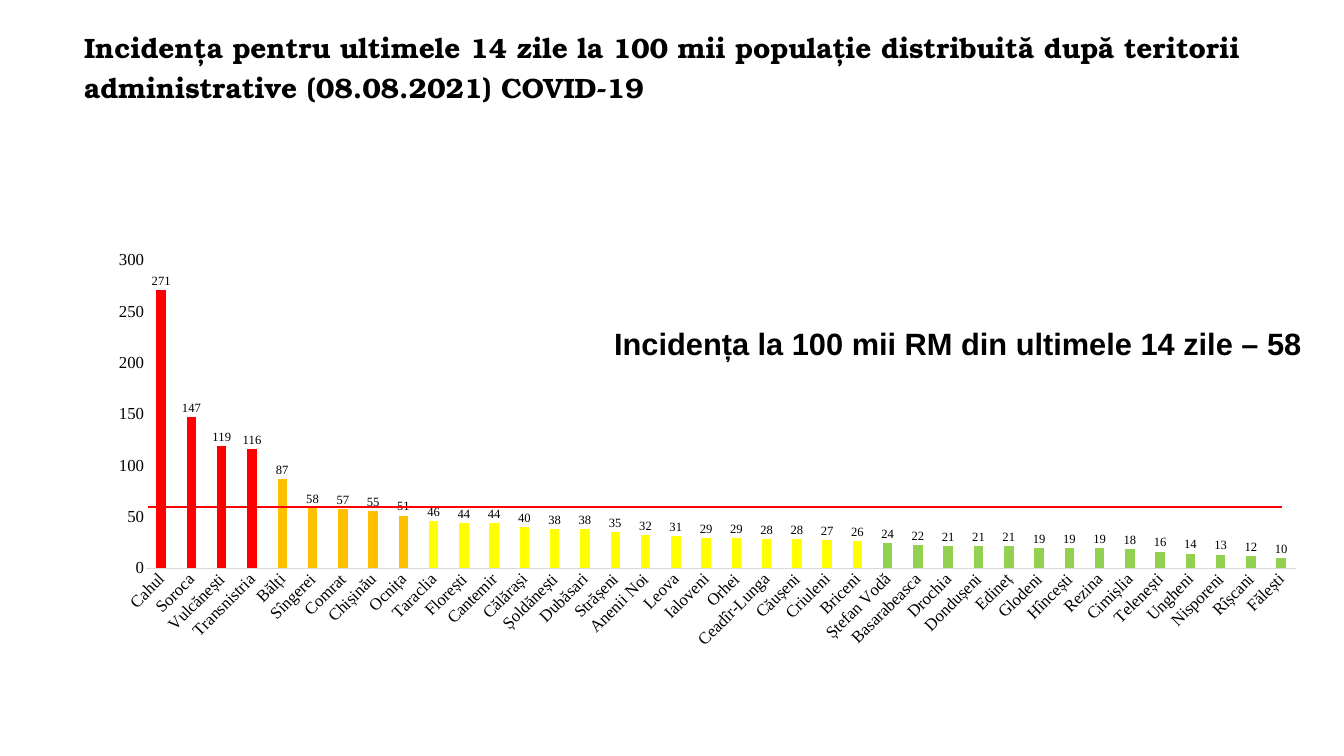
"""Build the slide on COVID-19 incidence by administrative territory."""
import dataclasses

import pptx
import pptx.chart.data
import pptx.dml.color
import pptx.enum.chart
import pptx.enum.shapes
import pptx.enum.text
import pptx.oxml
import pptx.oxml.ns
import pptx.util

EMU_PER_PX = 9144
BLACK, RED, GREEN = "000000", "FF0000", "92D050"
CHART_FONT = "Times New Roman"
THRESHOLDS = [(100, RED), (50, "FFC000"), (25, "FFFF00"), (0, GREEN)]
INCIDENCE = {
    "Cahul": 271, "Soroca": 147, "Vulcănești": 119, "Transnistria": 116,
    "Bălți": 87, "Sîngerei": 58, "Comrat": 57, "Chișinău": 55,
    "Ocnița": 51, "Taraclia": 46, "Florești": 44, "Cantemir": 44,
    "Călărași": 40, "Șoldănești": 38, "Dubăsari": 38, "Strășeni": 35,
    "Anenii Noi": 32, "Leova": 31, "Ialoveni": 29, "Orhei": 29,
    "Ceadîr-Lunga": 28, "Căușeni": 28, "Criuleni": 27, "Briceni": 26,
    "Ștefan Vodă": 24, "Basarabeasca": 22, "Drochia": 21, "Dondușeni": 21,
    "Edineț": 21, "Glodeni": 19, "Hîncești": 19, "Rezina": 19,
    "Cimișlia": 18, "Telenești": 16, "Ungheni": 14, "Nisporeni": 13,
    "Rîșcani": 12, "Fălești": 10,
}
PLOT_LAYOUT = {"x": 0.09, "y": 0.03, "w": 0.91, "h": 0.66}


@dataclasses.dataclass(frozen=True)
class Box:
    left: int
    top: int
    width: int
    height: int

    def emu(self) -> list[int]:
        return [px(value) for value in dataclasses.astuple(self)]


@dataclasses.dataclass(frozen=True)
class Caption:
    text: str
    box: Box
    font_name: str
    size: int
    alignment: pptx.enum.text.PP_ALIGN
    anchor: pptx.enum.text.MSO_ANCHOR
    line_spacing: float
    wrap: bool


CAPTIONS = [
    Caption("Incidența pentru ultimele 14 zile la 100 mii populație distribuită "
            "după teritorii administrative (08.08.2021) COVID-19",
            Box(157, 39, 2416, 177), "TeX Gyre Bonum", 40,
            pptx.enum.text.PP_ALIGN.LEFT, pptx.enum.text.MSO_ANCHOR.MIDDLE, 1.2, True),
    Caption("Incidența la 100 mii RM din ultimele 14 zile – 58",
            Box(1202, 640, 1400, 84), "Arial", 44,
            pptx.enum.text.PP_ALIGN.CENTER, pptx.enum.text.MSO_ANCHOR.TOP, 1.0, False),
]


def px(value: int) -> int:
    return pptx.util.Emu(value * EMU_PER_PX)


def color(value: str) -> pptx.dml.color.RGBColor:
    return pptx.dml.color.RGBColor.from_string(value)


def set_font(font, name: str, size: int, bold: bool = False) -> None:
    font.name = name
    font.size = pptx.util.Pt(size)
    font.bold = bold
    font.color.rgb = color(BLACK)


def level_color(value: int) -> str:
    return next(shade for limit, shade in THRESHOLDS if value >= limit)


def fill_bar(bar_format, shade: str) -> None:
    bar_format.fill.solid()
    bar_format.fill.fore_color.rgb = color(shade)


def set_plot_layout(chart) -> None:
    plot_area = chart._chartSpace.chart.plotArea
    for layout in plot_area.findall(pptx.oxml.ns.qn("c:layout")):
        plot_area.remove(layout)
    modes = "".join(f'<c:{axis}Mode val="edge"/>' for axis in "xy")
    values = "".join(f'<c:{key} val="{value}"/>' for key, value in PLOT_LAYOUT.items())
    plot_area.insert(0, pptx.oxml.parse_xml(
        f'<c:layout {pptx.oxml.ns.nsdecls("c")}><c:manualLayout>'
        f'<c:layoutTarget val="inner"/>{modes}{values}</c:manualLayout></c:layout>'))


def style_axes(chart) -> None:
    for axis in (chart.category_axis, chart.value_axis):
        axis.major_tick_mark = pptx.enum.chart.XL_TICK_MARK.NONE
        axis.minor_tick_mark = pptx.enum.chart.XL_TICK_MARK.NONE
        axis.has_major_gridlines = False
        set_font(axis.tick_labels.font, CHART_FONT, 24)
    category_line = chart.category_axis.format.line
    category_line.color.rgb = color("D9D9D9")
    category_line.width = pptx.util.Pt(0.75)
    chart.category_axis._element.txPr.bodyPr.set("rot", "-2700000")
    value_axis = chart.value_axis
    value_axis.format.line.fill.background()
    value_axis.minimum_scale, value_axis.maximum_scale = 0, 300
    value_axis.major_unit = 50
    value_axis.tick_labels.number_format = "0"
    value_axis.tick_labels.number_format_is_linked = False


def add_incidence_chart(slide, box: Box) -> None:
    data = pptx.chart.data.CategoryChartData(number_format="0")
    data.categories = list(INCIDENCE)
    data.add_series("Series 1", list(INCIDENCE.values()))
    chart = slide.shapes.add_chart(
        pptx.enum.chart.XL_CHART_TYPE.COLUMN_CLUSTERED, *box.emu(), data).chart
    chart.has_title = False
    chart.has_legend = False
    set_font(chart.font, CHART_FONT, 24)
    set_plot_layout(chart)
    style_axes(chart)
    plot = chart.plots[0]
    plot.vary_by_categories = False
    plot.gap_width = 219
    plot.overlap = -27
    series = plot.series[0]
    series.invert_if_negative = False
    fill_bar(series.format, GREEN)
    for index, value in enumerate(INCIDENCE.values()):
        if level_color(value) != GREEN:
            fill_bar(series.points[index].format, level_color(value))
    labels = series.data_labels
    labels.show_value = True
    labels.number_format = "0"
    labels.number_format_is_linked = False
    labels.position = pptx.enum.chart.XL_LABEL_POSITION.OUTSIDE_END
    set_font(labels.font, CHART_FONT, 18)


def add_caption(slide, caption: Caption) -> None:
    frame = slide.shapes.add_textbox(*caption.box.emu()).text_frame
    frame.word_wrap = caption.wrap
    frame.vertical_anchor = caption.anchor
    paragraph = frame.paragraphs[0]
    paragraph.text = caption.text
    paragraph.alignment = caption.alignment
    paragraph.line_spacing = caption.line_spacing
    set_font(paragraph.font, caption.font_name, caption.size, bold=True)


def add_average_line(slide, left: int, right: int, top: int) -> None:
    connector = slide.shapes.add_connector(
        pptx.enum.shapes.MSO_CONNECTOR.STRAIGHT, px(left), px(top), px(right), px(top))
    connector.line.color.rgb = color(RED)
    connector.line.width = pptx.util.Pt(3)
    connector._element.spPr.append(
        pptx.oxml.parse_xml(f'<a:effectLst {pptx.oxml.ns.nsdecls("a")}/>'))


def main() -> None:
    presentation = pptx.Presentation()
    presentation.slide_width, presentation.slide_height = px(2667), px(1500)
    slide = presentation.slides.add_slide(presentation.slide_layouts[6])
    add_incidence_chart(slide, Box(64, 488, 2509, 926))
    add_average_line(slide, 293, 2544, 1006)
    for caption in CAPTIONS:
        add_caption(slide, caption)
    presentation.save("out.pptx")


if __name__ == "__main__":
    main()
